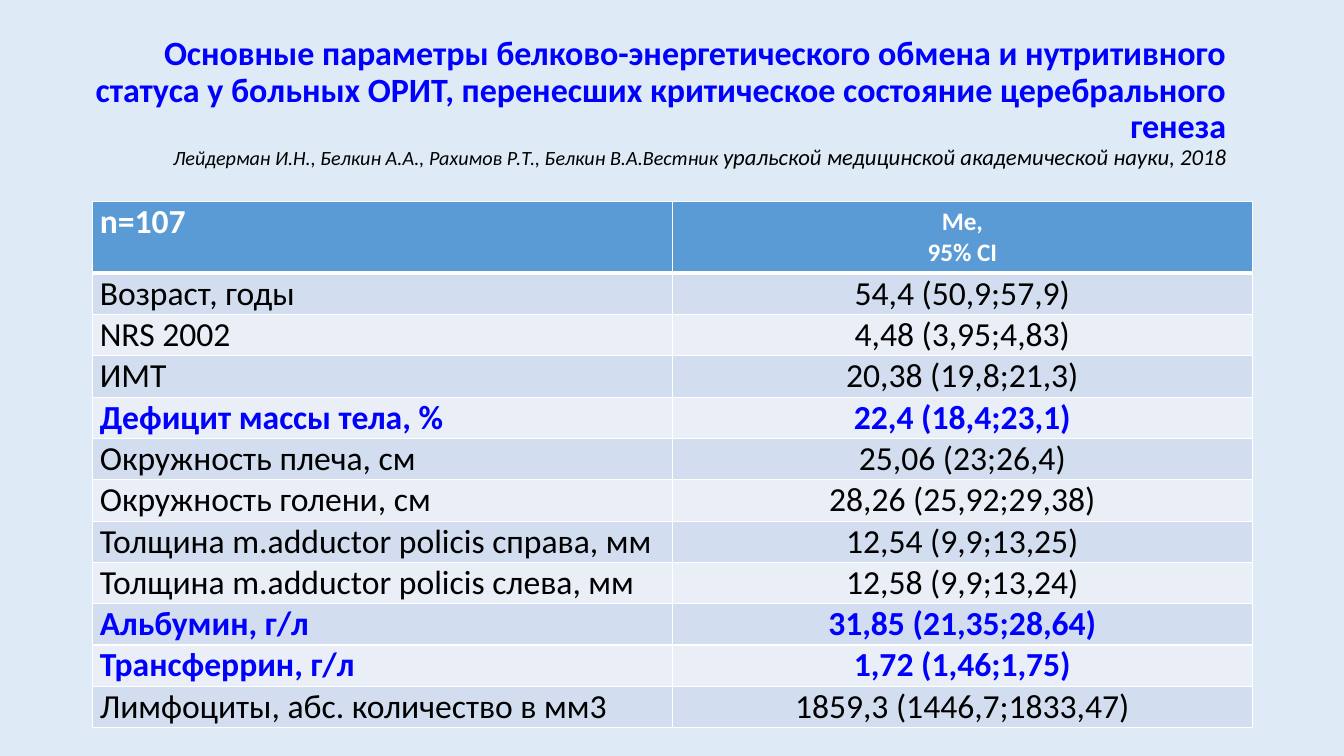
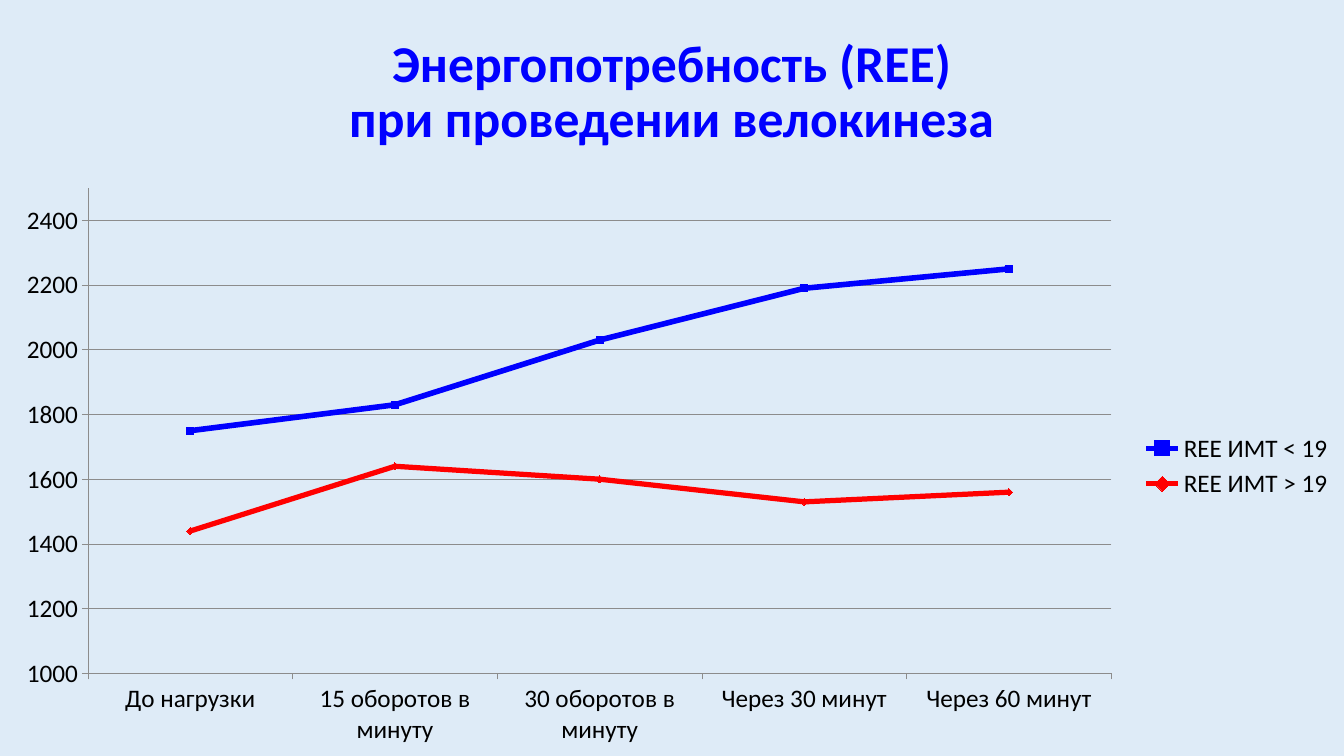
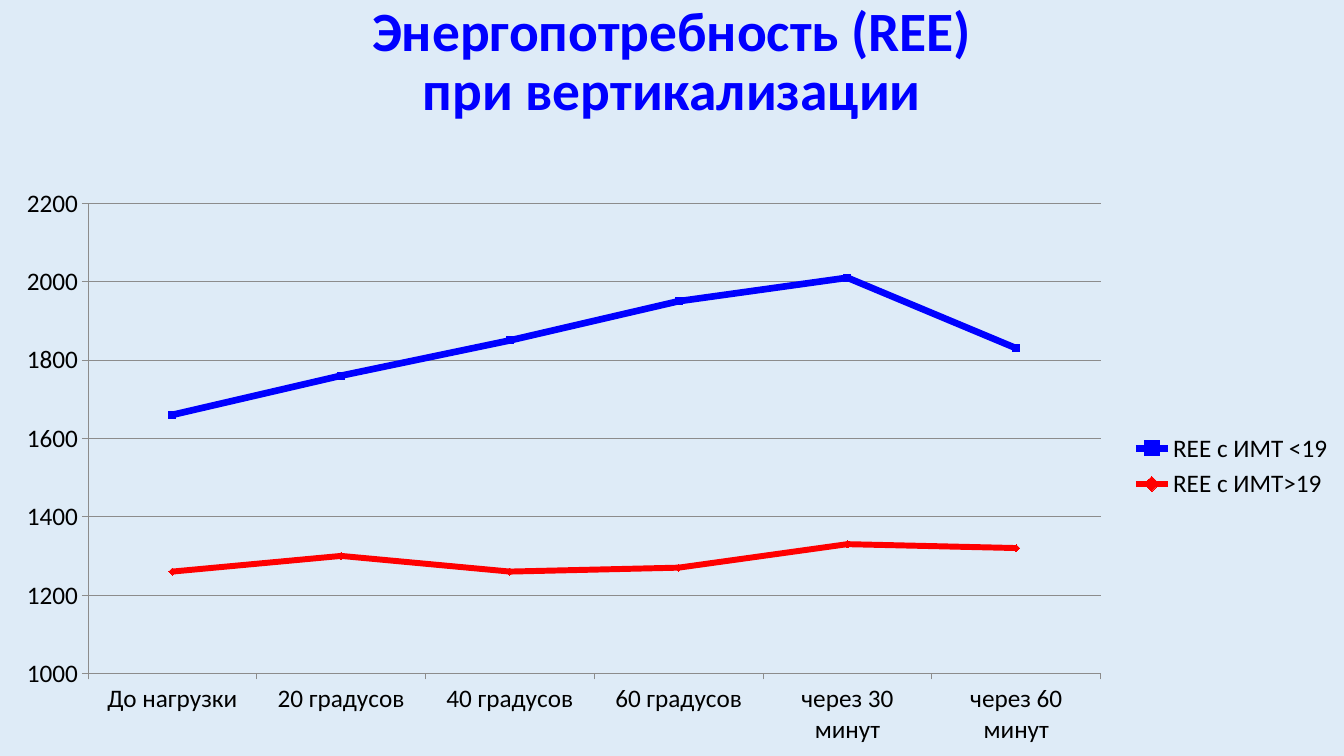
from lxml import etree
from pptx import Presentation
from pptx.chart.data import CategoryChartData
from pptx.dml.color import RGBColor
from pptx.enum.chart import XL_CHART_TYPE, XL_LEGEND_POSITION, XL_MARKER_STYLE, XL_TICK_MARK
from pptx.enum.text import MSO_ANCHOR, MSO_AUTO_SIZE, PP_ALIGN
from pptx.oxml.ns import qn
from pptx.util import Inches, Pt

LEFT, CENTER, RIGHT = PP_ALIGN.LEFT, PP_ALIGN.CENTER, PP_ALIGN.RIGHT
MIDDLE, NO_FIT = MSO_ANCHOR.MIDDLE, MSO_AUTO_SIZE.NONE
LINE_MARKERS = XL_CHART_TYPE.LINE_MARKERS
LEGEND_RIGHT = XL_LEGEND_POSITION.RIGHT
TICK_OUT = XL_TICK_MARK.OUTSIDE
SQUARE, DIAMOND = XL_MARKER_STYLE.SQUARE, XL_MARKER_STYLE.DIAMOND

FONT = "Calibri"
PALE_BLUE = RGBColor(0xDE, 0xEB, 0xF7)
BLUE = RGBColor(0x00, 0x00, 0xFF)
RED = RGBColor(0xFF, 0x00, 0x00)
BLACK = RGBColor(0x00, 0x00, 0x00)
WHITE = RGBColor(0xFF, 0xFF, 0xFF)
GRAY = RGBColor(0x8C, 0x8C, 0x8C)
HEADER_BLUE = RGBColor(0x5B, 0x9B, 0xD5)
BANDS = (RGBColor(0xD2, 0xDE, 0xEF), RGBColor(0xEA, 0xEF, 0xF7))

SLIDE_WIDTH, SLIDE_HEIGHT = Inches(13.33), Inches(7.5)
TITLE_HEIGHT = Inches(1.25)
CHART_TOP = Inches(1.75)
TABLE_LEFT, TABLE_TOP = Inches(0.92), Inches(2)
COLUMN_WIDTH = Inches(5.75)
HEADER_HEIGHT, ROW_HEIGHT = Inches(0.7), Inches(0.41)

STATUS_TITLE = (
    "Основные параметры белково-энергетического обмена и нутритивного статуса "
    "у больных ОРИТ, перенесших критическое состояние церебрального генеза"
)
CITATION = (
    ("Лейдерман И.Н., Белкин А.А., Рахимов Р.Т., Белкин В.А.Вестник ", 14.4),
    ("уральской медицинской академической науки, 2018", 16.2),
)
HEADER = ("n=107", ("Ме,", "95% CI"))
MEASURES = (
    ("Возраст, годы", "54,4 (50,9;57,9)"),
    ("NRS 2002", "4,48 (3,95;4,83)"),
    ("ИМТ", "20,38 (19,8;21,3)"),
    ("Дефицит массы тела, %", "22,4 (18,4;23,1)"),
    ("Окружность плеча, см", "25,06 (23;26,4)"),
    ("Окружность голени, см", "28,26 (25,92;29,38)"),
    ("Толщина m.adductor policis справа, мм", "12,54 (9,9;13,25)"),
    ("Толщина m.adductor policis слева, мм", "12,58 (9,9;13,24)"),
    ("Альбумин, г/л", "31,85 (21,35;28,64)"),
    ("Трансферрин, г/л", "1,72 (1,46;1,75)"),
    ("Лимфоциты, абс. количество в мм3", "1859,3 (1446,7;1833,47)"),
)
KEY_MEASURES = ("Дефицит массы тела, %", "Альбумин, г/л", "Трансферрин, г/л")
SERIES_STYLES = ((BLUE, SQUARE), (RED, DIAMOND))
CHART_SLIDES = (
    {
        "title": ("Энергопотребность (REE)", "при проведении велокинеза"),
        "title_top": 0.3,
        "title_size": 36.9,
        "maximum": 2500,
        "categories": ("До нагрузки", "15 оборотов в минуту", "30 оборотов в минуту",
                       "Через 30 минут", "Через 60 минут"),
        "series": (
            ("REE ИМТ < 19", (1750, 1830, 2030, 2190, 2250), 4),
            ("REE ИМТ > 19", (1440, 1640, 1600, 1530, 1560), 3.75),
        ),
    },
    {
        "title": ("Энергопотребность (REE)", "при вертикализации"),
        "title_top": 0,
        "title_size": 39.6,
        "maximum": 2200,
        "categories": ("До нагрузки", "20 градусов", "40 градусов", "60 градусов",
                       "через 30 минут", "через 60 минут"),
        "series": (
            ("REE c ИМТ <19", (1660, 1760, 1850, 1950, 2010, 1830), 4.75),
            ("REE c ИМТ>19", (1260, 1300, 1260, 1270, 1330, 1320), 4.25),
        ),
    },
)


def add_span(para, text, *, size, color=BLACK, bold=False, italic=False):
    span = para.add_run()
    span.text = text
    font = span.font
    font.name, font.size, font.bold, font.italic = FONT, Pt(size), bold, italic
    font.color.rgb = color


def write_lines(frame, lines, *, align=LEFT, spacing=None, **style):
    for index, line in enumerate(lines):
        para = frame.add_paragraph() if index else frame.paragraphs[0]
        para.alignment = align
        para.line_spacing = spacing
        add_span(para, line, **style)


def add_page(deck, lines, *, left, top, width, height, size, align):
    page = deck.slides.add_slide(deck.slide_layouts[5])
    title = page.shapes.title
    title.left, title.top, title.width, title.height = left, top, width, height
    frame = title.text_frame
    frame.word_wrap = True
    frame.auto_size = NO_FIT
    frame.vertical_anchor = MIDDLE
    write_lines(frame, lines, align=align, spacing=0.9, size=size, color=BLUE, bold=True)
    return page


def add_borders(cell, *, top=1, bottom=1):
    properties = cell._tc.get_or_add_tcPr()
    for side, points in (("L", 1), ("R", 1), ("T", top), ("B", bottom)):
        line = etree.SubElement(properties, qn(f"a:ln{side}"), w=str(Pt(points)))
        fill = etree.SubElement(line, qn("a:solidFill"))
        etree.SubElement(fill, qn("a:srgbClr"), val=str(WHITE))


def format_cell(cell, lines, *, fill, margin=0, top=1, bottom=1, **style):
    cell.margin_left = cell.margin_right = Inches(0.07)
    cell.margin_top = cell.margin_bottom = Inches(margin)
    add_borders(cell, top=top, bottom=bottom)
    cell.fill.solid()
    cell.fill.fore_color.rgb = fill
    write_lines(cell.text_frame, lines, **style)


def add_measures(page):
    table = page.shapes.add_table(
        len(MEASURES) + 1, 2, TABLE_LEFT, TABLE_TOP, COLUMN_WIDTH * 2,
        HEADER_HEIGHT + ROW_HEIGHT * len(MEASURES)).table
    for row in table.rows:
        row.height = ROW_HEIGHT
    table.rows[0].height = HEADER_HEIGHT
    header = {"fill": HEADER_BLUE, "bottom": 3, "color": WHITE, "bold": True}
    format_cell(table.cell(0, 0), HEADER[:1], size=24, **header)
    format_cell(table.cell(0, 1), HEADER[1], size=18, margin=0.05, align=CENTER, **header)
    for number, measure in enumerate(MEASURES, 1):
        key = measure[0] in KEY_MEASURES
        for column, (text, align) in enumerate(zip(measure, (LEFT, CENTER))):
            format_cell(table.cell(number, column), [text], fill=BANDS[(number - 1) % 2],
                        top=3 if number == 1 else 1, align=align, size=24,
                        color=BLUE if key else BLACK, bold=key)


def format_line(line, color, points):
    line.color.rgb = color
    line.width = Pt(points)


def add_energy_chart(page, content):
    data = CategoryChartData()
    data.categories = content["categories"]
    for name, values, _ in content["series"]:
        data.add_series(name, values)
    chart = page.shapes.add_chart(LINE_MARKERS, 0, CHART_TOP, SLIDE_WIDTH,
                                  SLIDE_HEIGHT - CHART_TOP, data).chart
    chart.has_title = False
    chart.font.name, chart.font.size = FONT, Pt(18)
    chart.font.color.rgb = BLACK
    chart.has_legend = True
    chart.legend.position = LEGEND_RIGHT
    chart.legend.include_in_layout = False
    for axis in (chart.category_axis, chart.value_axis):
        axis.major_tick_mark = TICK_OUT
        format_line(axis.format.line, GRAY, 0.5)
    scale = chart.value_axis
    scale.minimum_scale, scale.maximum_scale, scale.major_unit = 1000, content["maximum"], 200
    scale.has_major_gridlines = True
    format_line(scale.major_gridlines.format.line, GRAY, 0.5)
    plot = chart.plots[0]
    plot.vary_by_categories = False
    for series, (_, _, points), (color, marker) in zip(
            plot.series, content["series"], SERIES_STYLES):
        series.smooth = False
        format_line(series.format.line, color, points)
        series.marker.style, series.marker.size = marker, 5
        series.marker.format.fill.solid()
        series.marker.format.fill.fore_color.rgb = color
        series.marker.format.line.color.rgb = color


def main():
    deck = Presentation()
    deck.slide_width, deck.slide_height = SLIDE_WIDTH, SLIDE_HEIGHT
    background = deck.slide_master.background.fill
    background.solid()
    background.fore_color.rgb = PALE_BLUE

    page = add_page(deck, [STATUS_TITLE], left=Inches(0.76), top=Inches(0.3),
                    width=Inches(11.5), height=Inches(1.45), size=24.3, align=RIGHT)
    source = page.shapes.title.text_frame.add_paragraph()
    source.alignment = RIGHT
    source.line_spacing = 0.9
    for text, size in CITATION:
        add_span(source, text, size=size, italic=True)
    add_measures(page)

    for content in CHART_SLIDES:
        page = add_page(deck, content["title"], left=0, top=Inches(content["title_top"]),
                        width=SLIDE_WIDTH, height=TITLE_HEIGHT,
                        size=content["title_size"], align=CENTER)
        add_energy_chart(page, content)
    deck.save("out.pptx")


if __name__ == "__main__":
    main()
